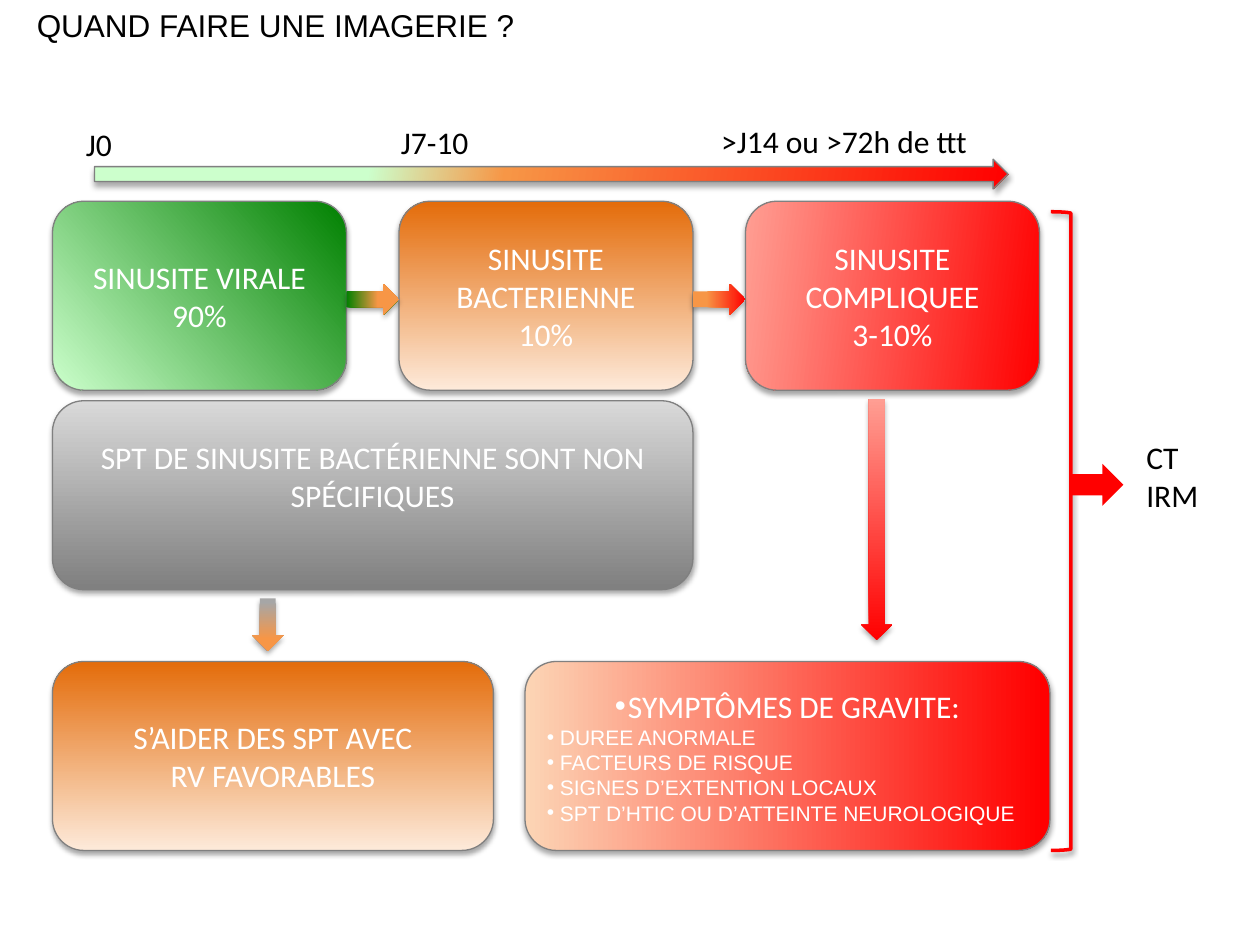
from dataclasses import dataclass
from lxml.etree import SubElement as Sub
from pptx import Presentation
from pptx.dml.color import RGBColor as Rgb
from pptx.enum.shapes import MSO_SHAPE as Geo
from pptx.enum.text import MSO_ANCHOR as Anchor, MSO_AUTO_SIZE as Auto, PP_ALIGN as Align
from pptx.oxml.ns import qn
from pptx.util import Pt


@dataclass(frozen=True)
class Theme:
    black: str = "000000"
    white: str = "FFFFFF"
    edge: str = "808080"
    silver: str = "D9D9D9"
    ash: str = "A6A6A6"
    green: str = "008000"
    mint: str = "CCFFCC"
    amber: str = "F79646"
    rust: str = "E46C0A"
    cream: str = "FDEADA"
    peach: str = "FCD5B5"
    red: str = "FF0000"
    rose: str = "FF9E93"
    sans: str = "Calibri"
    plain: str = "Arial"
    large: int = 18
    small: int = 12


T = Theme()
LEFT, TOP, WIDE, HIGH, GAP = 30, 115, 168, 108, 30
LOW = 378


def place(shape, box):
    shape.left, shape.top, shape.width, shape.height = map(Pt, box)


def style(paras, color, font=T.sans, size=T.large, align=Align.LEFT):
    for para in paras:
        para.alignment = align
        for run in para.runs:
            run.font.name, run.font.size = font, Pt(size)
            run.font.color.rgb = Rgb.from_string(color)


def blend(shape, stops, angle):
    shape.fill.gradient()
    shape.fill.gradient_angle = (360 - angle) % 360
    rows = shape._element.spPr.find(qn("a:gradFill")).find(qn("a:gsLst"))
    for row in list(rows):
        rows.remove(row)
    for spot, color in stops:
        stop = Sub(rows, qn("a:gs"), pos=str(spot * 1000))
        Sub(stop, qn("a:srgbClr"), val=color)


def shade(shape, alpha=35):
    shape.shadow.inherit = False
    effects = shape._element.spPr.find(qn("a:effectLst"))
    cast = Sub(effects, qn("a:outerShdw"), blurRad=str(Pt(3.1)), dist=str(Pt(1.8)),
               dir="5400000", rotWithShape="0")
    color = Sub(cast, qn("a:srgbClr"), val=T.black)
    Sub(color, qn("a:alpha"), val=str(alpha * 1000))


def rule(shape, color, width):
    shape.line.color.rgb = Rgb.from_string(color)
    shape.line.width = Pt(width)


def dress(shape, stops, angle):
    blend(shape, stops, angle)
    rule(shape, T.edge, 0.75)
    shade(shape)


def card(slide, box, text, stops, angle, lift=0):
    shape = slide.shapes.add_shape(Geo.ROUNDED_RECTANGLE, *map(Pt, box))
    dress(shape, stops, angle)
    frame = shape.text_frame
    frame.text = text
    frame.vertical_anchor = Anchor.MIDDLE
    frame.margin_bottom = Pt(3.6 + lift)
    style(frame.paragraphs, T.white, align=Align.CENTER)


def arrow(slide, box, stops, angle=0, turn=0):
    shape = slide.shapes.add_shape(Geo.RIGHT_ARROW, *map(Pt, box))
    shape.rotation = turn
    blend(shape, stops, angle)
    shape.line.fill.background()
    shade(shape)
    return shape


def label(slide, box, text):
    frame = slide.shapes.add_textbox(*map(Pt, box)).text_frame
    frame.text = text
    frame.word_wrap = False
    frame.auto_size = Auto.SHAPE_TO_FIT_TEXT
    style(frame.paragraphs, T.black)


def heading(slide, text):
    title = slide.shapes.title
    place(title, (0, 0, 691, 73))
    frame = title.text_frame
    frame.text = text
    frame.vertical_anchor = Anchor.TOP
    frame.auto_size = Auto.NONE
    frame.margin_left = Pt(21)
    style(frame.paragraphs, T.black, T.plain)


def signs(slide, box, head, items):
    body = slide.placeholders[1]
    place(body, box)
    shape = body._element.spPr
    geom = Sub(shape, qn("a:prstGeom"), prst="roundRect")
    Sub(geom, qn("a:avLst"))
    dress(body, [(0, T.peach), (99, T.red)], 0)
    frame = body.text_frame
    frame.text = "\n".join([head, *items])
    frame.vertical_anchor = Anchor.MIDDLE
    frame.auto_size = Auto.NONE
    first, *rest = frame.paragraphs
    style([first], T.white, align=Align.CENTER)
    style(rest, T.white, T.plain, T.small)
    for para in frame.paragraphs:
        para.space_before = Pt(0)
        props = para._p.get_or_add_pPr()
        dent = 0 if para is first else Pt(7.5)
        props.set("marL", str(dent))
        props.set("indent", str(-dent))
        if para is first:
            Sub(props, qn("a:buNone"))
        else:
            Sub(props, qn("a:buFont"), typeface=T.plain)
            Sub(props, qn("a:buChar"), char="•")


def stages(slide):
    line = arrow(slide, (54, 91, 522, 17), [(30, T.mint), (45, T.amber), (100, T.red)], 9)
    rule(line, T.edge, 0.75)
    label(slide, (42, 68, 34, 29), "J0")
    label(slide, (222, 67, 60, 29), "J7-10")
    label(slide, (405, 66, 171, 29), ">J14 ou >72h de ttt")
    steps = [
        ("SINUSITE VIRALE\n90%", [(0, T.green), (100, T.mint)], 139),
        ("SINUSITE BACTERIENNE\n10%", [(0, T.cream), (100, T.rust)], 270),
        ("SINUSITE COMPLIQUEE\n3-10%", [(0, T.red), (100, T.rose)], 187),
    ]
    for i, (text, stops, angle) in enumerate(steps):
        card(slide, (LEFT + i * (WIDE + GAP), TOP, WIDE, HIGH), text, stops, angle)
    links = [[(0, T.green), (60, T.amber)], [(26, T.amber), (100, T.red)]]
    for i, stops in enumerate(links):
        arrow(slide, (LEFT + WIDE + i * (WIDE + GAP), 162, GAP, 18), stops)


def advice(slide):
    card(slide, (LEFT, 229, 2 * WIDE + GAP, HIGH),
         "SPT DE SINUSITE BACTÉRIENNE SONT NON SPÉCIFIQUES",
         [(1, T.edge), (100, T.silver)], 270, lift=21.6)
    card(slide, (LEFT, LOW, 252, HIGH), "S’AIDER DES SPT AVEC\nRV FAVORABLES",
         [(0, T.cream), (100, T.rust)], 270)
    arrow(slide, (138, 348, 30, 18), [(7, T.ash), (77, T.amber)], turn=90)
    arrow(slide, (432, 288, 138, 18), [(0, T.red), (100, T.rose)], 180, 90)


def scans(slide):
    brace = slide.shapes.add_shape(Geo.RIGHT_BRACKET, *map(Pt, (600.5, 121, 11.5, 365)))
    brace.fill.background()
    rule(brace, T.red, 2)
    shade(brace, 38)
    point = slide.shapes.add_shape(Geo.RIGHT_ARROW, *map(Pt, (612, 265, 30, 24)))
    point.fill.solid()
    point.fill.fore_color.rgb = Rgb.from_string(T.red)
    point.line.fill.background()
    point.shadow.inherit = False
    label(slide, (648, 247, 47.5, 51), "CT\nIRM")


def main():
    deck = Presentation()
    deck.slide_width, deck.slide_height = Pt(720), Pt(540)
    slide = deck.slides.add_slide(deck.slide_layouts[1])
    heading(slide, "QUAND FAIRE UNE IMAGERIE ?")
    signs(slide, (300, LOW, 300, HIGH), "SYMPTÔMES DE GRAVITE:", [
        "DUREE ANORMALE",
        "FACTEURS DE RISQUE",
        "SIGNES D’EXTENTION LOCAUX",
        "SPT D’HTIC OU D’ATTEINTE NEUROLOGIQUE",
    ])
    stages(slide)
    advice(slide)
    scans(slide)
    deck.save("out.pptx")


if __name__ == "__main__":
    main()
